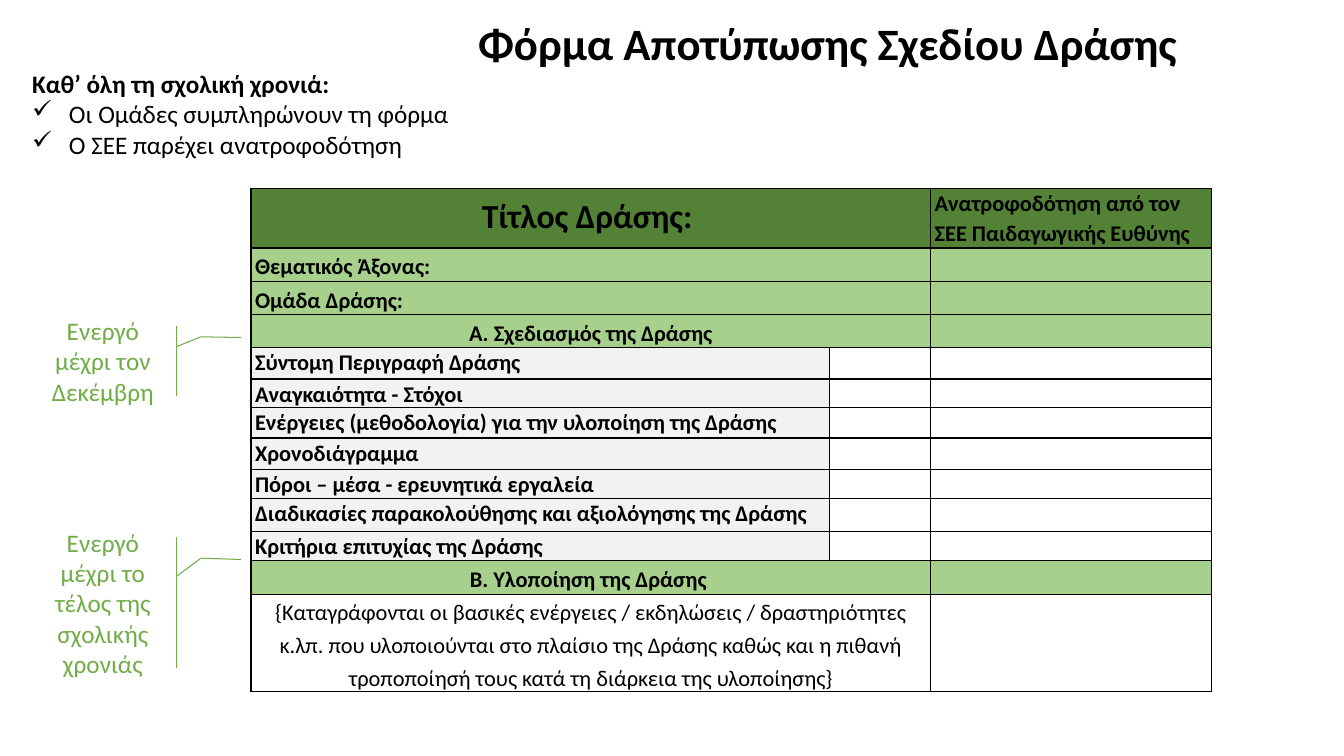
import pptx
import pptx.util
import pptx.dml.color
import pptx.enum.shapes
import pptx.enum.text
import pptx.oxml
import pptx.oxml.ns

PX = 9144  # EMU per px, 100 px to the inch
COLORS = {"text": "000000", "head": "538135", "band": "A8D08D",
          "label": "F2F2F2", "blank": "FFFFFF", "callout": "70AD47"}
ALIGN = pptx.enum.text.PP_ALIGN
ANCHOR = pptx.enum.text.MSO_ANCHOR

# Table rows: height, kind, text
ROWS = [
    (59, "head", "Τίτλος Δράσης: "),
    (33, "band", "Θεματικός Άξονας:"),
    (33, "band", "Ομάδα Δράσης:"),
    (33, "section", "Α. Σχεδιασμός της Δράσης"),
    (31, "label", "Σύντομη Περιγραφή Δράσης"),
    (28, "label", "Αναγκαιότητα - Στόχοι"),
    (30, "label", "Ενέργειες (μεθοδολογία) για την υλοποίηση της Δράσης"),
    (31, "label", "Χρονοδιάγραμμα"),
    (29, "label", "Πόροι – μέσα - ερευνητικά εργαλεία"),
    (33, "label", "Διαδικασίες παρακολούθησης και αξιολόγησης της Δράσης"),
    (29, "label", "Κριτήρια επιτυχίας της Δράσης"),
    (33, "section", "Β. Υλοποίηση της Δράσης "),
    (97, "note", "{Καταγράφονται οι βασικές ενέργειες / εκδηλώσεις / δραστηριότητες "
                 "κ.λπ. που υλοποιούνται στο πλαίσιο της Δράσης καθώς και η πιθανή "
                 "τροποποίησή τους κατά τη διάρκεια της υλοποίησης}"),
]
COLUMNS = (574, 100, 279)
FEEDBACK = "Ανατροφοδότηση από τον ΣΕΕ Παιδαγωγικής Ευθύνης"
# Row kind: fill, alignment, size, bold, line spacing
KINDS = {
    "head": ("head", ALIGN.CENTER, 24, True, 1.2),
    "band": ("band", ALIGN.LEFT, 16, True, 1.2),
    "section": ("band", ALIGN.CENTER, 16, True, 1.2),
    "label": ("label", ALIGN.LEFT, 16, True, 1.07),
    "note": ("blank", ALIGN.CENTER, 16, False, 1.2),
}


def px(*lengths):
    return [pptx.util.Emu(length * PX) for length in lengths]


def rgb(name):
    return pptx.dml.color.RGBColor.from_string(COLORS[name])


def write(para, text, size, bold=False, align=ALIGN.LEFT, color="text", spacing=None):
    para.text = text
    para.alignment = align
    para.line_spacing = spacing
    para.font.name = "Calibri"
    para.font.size = pptx.util.Pt(size)
    para.font.bold = bold
    para.font.color.rgb = rgb(color)


def add_text_box(page, box):
    frame = page.shapes.add_textbox(*px(*box)).text_frame
    frame.word_wrap = True
    return frame


def add_title(page, box):
    frame = add_text_box(page, box)
    frame.vertical_anchor = ANCHOR.MIDDLE
    write(frame.paragraphs[0], "Φόρμα Αποτύπωσης Σχεδίου Δράσης", 32, True,
          ALIGN.CENTER, spacing=0.9)


def add_intro(page, box):
    frame = add_text_box(page, box)
    lines = ["Καθ’ όλη τη σχολική χρονιά:", " Οι Ομάδες συμπληρώνουν τη φόρμα",
             " Ο ΣΕΕ παρέχει ανατροφοδότηση"]
    for index, line in enumerate(lines):
        para = frame.add_paragraph() if index else frame.paragraphs[0]
        write(para, line, 18, bold=index == 0)
        props = para._p.get_or_add_pPr()
        props.set("marL", str(31 * PX))
        props.set("indent", str(-31 * PX))
        if index:
            bullet = pptx.oxml.parse_xml(
                f'<a:buChar {pptx.oxml.ns.nsdecls("a")} char="✓"/>')
            props.insert_element_before(bullet, "a:tabLst", "a:defRPr", "a:extLst")


def style_cell(cell, fill):
    cell.margin_left, cell.margin_right = px(4, 4)
    cell.margin_top = cell.margin_bottom = 0
    props = cell._tc.get_or_add_tcPr()
    for side in ("lnL", "lnR", "lnT", "lnB"):
        props.append(pptx.oxml.parse_xml(
            f'<a:{side} {pptx.oxml.ns.nsdecls("a")} w="12700"><a:solidFill>'
            f'<a:srgbClr val="{COLORS["text"]}"/></a:solidFill></a:{side}>'))
    cell.fill.solid()
    cell.fill.fore_color.rgb = rgb(fill)


def add_form(page, left, top):
    box = (left, top, sum(COLUMNS), sum(row[0] for row in ROWS))
    table = page.shapes.add_table(len(ROWS), len(COLUMNS), *px(*box)).table
    for column, width in zip(table.columns, px(*COLUMNS)):
        column.width = width
    for index, (height, kind, text) in enumerate(ROWS):
        fill, align, size, bold, spacing = KINDS[kind]
        table.rows[index].height = px(height)[0]
        cells = list(table.rows[index].cells)
        side_fill = "blank" if kind == "label" else fill
        for cell, cell_fill in zip(cells, (fill, side_fill, side_fill)):
            style_cell(cell, cell_fill)
            cell.text_frame.paragraphs[0].font.size = pptx.util.Pt(16)
        if kind != "label":
            cells[0].merge(cells[1])
        write(cells[0].text_frame.paragraphs[0], text, size, bold, align, spacing=spacing)
    write(table.cell(0, 2).text_frame.paragraphs[0], FEEDBACK, 16, True, spacing=1.07)


def add_callout(page, box, text):
    kind = pptx.enum.shapes.MSO_SHAPE.LINE_CALLOUT_2_ACCENT_BAR
    callout = page.shapes.add_shape(kind, *px(*box))
    callout.shadow.inherit = False
    for index, value in enumerate((0.3, 1.07, 0.16, 1.26, 0.17, 1.57)):
        callout.adjustments[index] = value
    callout.fill.background()
    callout.line.color.rgb = rgb("callout")
    callout.line.width = pptx.util.Pt(0.75)
    frame = callout.text_frame
    frame.word_wrap = True
    frame.vertical_anchor = ANCHOR.MIDDLE
    write(frame.paragraphs[0], text, 18, align=ALIGN.CENTER, color="callout")


def main():
    deck = pptx.Presentation()
    deck.slide_width, deck.slide_height = px(1333, 750)
    page = deck.slides.add_slide(deck.slide_layouts[6])
    add_title(page, (424, 14, 794, 63))
    add_form(page, 249, 187)
    add_intro(page, (22, 63, 490, 101))
    add_callout(page, (38, 323, 128, 70), "Ενεργό μέχρι τον Δεκέμβρη")
    add_callout(page, (38, 533, 128, 130), "Ενεργό μέχρι το τέλος της σχολικής χρονιάς")
    deck.save("out.pptx")


if __name__ == "__main__":
    main()
